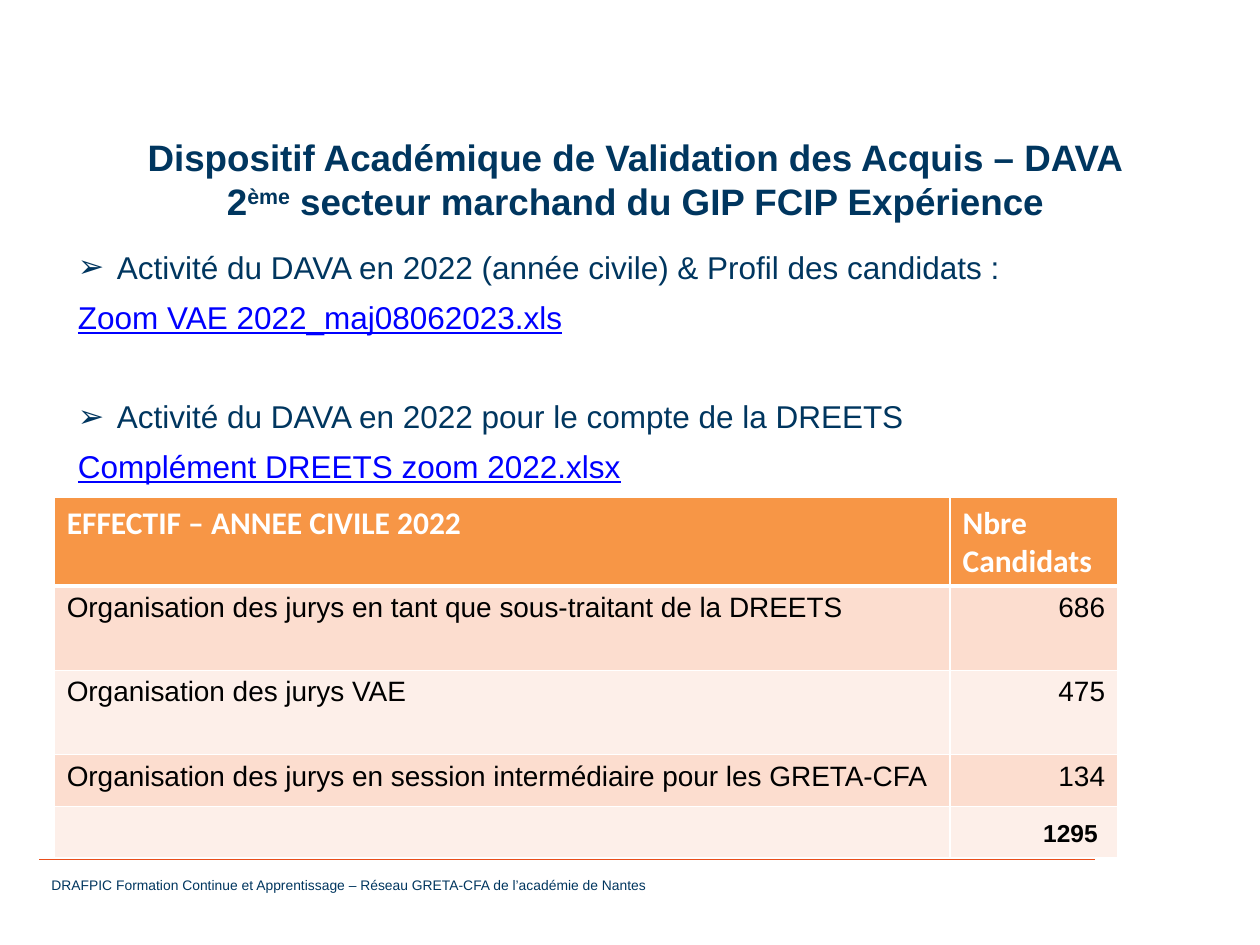
from pptx import Presentation
from pptx.dml.color import RGBColor
from pptx.enum.shapes import MSO_CONNECTOR
from pptx.enum.text import MSO_ANCHOR, PP_ALIGN
from pptx.oxml.ns import qn
from pptx.util import Inches, Pt
from lxml.etree import SubElement

NAVY = RGBColor(0x00, 0x36, 0x5F)
BLUE = RGBColor(0x00, 0x00, 0xFF)
RUST = RGBColor(0xE9, 0x4E, 0x1B)
ORANGE = RGBColor(0xF7, 0x96, 0x46)
PEACH = RGBColor(0xFC, 0xDD, 0xCF)
PALE = RGBColor(0xFD, 0xEF, 0xE9)
WHITE = RGBColor(0xFF, 0xFF, 0xFF)
BLACK = RGBColor(0x00, 0x00, 0x00)


def write(par, text, size=18, color=NAVY, face="Arial", bold=False,
          under=False, align=PP_ALIGN.LEFT, raised=False):
    par.alignment = align
    run = par.add_run()
    run.text = text
    font = run.font
    font.size, font.name, font.bold = Pt(size), face, bold
    font.underline = under
    font.color.rgb = color
    if raised:
        run._r.get_or_add_rPr().set("baseline", "30000")


def edge(cell, side, width):
    line = SubElement(cell._tc.get_or_add_tcPr(), qn("a:" + side), w=str(Pt(width)))
    fill = SubElement(line, qn("a:solidFill"))
    SubElement(fill, qn("a:srgbClr"), val=str(WHITE))


deck = Presentation()
deck.slide_width, deck.slide_height = Inches(10), Inches(7.5)
slide = deck.slides.add_slide(deck.slide_layouts[5])
shapes = slide.shapes

rule = shapes.add_connector(MSO_CONNECTOR.STRAIGHT, Inches(0.31), Inches(6.82),
                            Inches(8.69), Inches(6.82))
rule.line.color.rgb = RUST
rule.line.width = Pt(0.25)
SubElement(rule._element.spPr, qn("a:effectLst"))

foot = shapes.add_textbox(Inches(0.31), Inches(6.91), Inches(6.19), Inches(0.23)).text_frame
foot.word_wrap = True
write(foot.paragraphs[0],
      "DRAFPIC Formation Continue et Apprentissage – Réseau GRETA-CFA de l’académie de Nantes",
      size=7.9)

title = shapes.title
title.left, title.top = Inches(0.43), Inches(1.02)
title.width, title.height = Inches(9.23), Inches(1.57)
head = title.text_frame
head.word_wrap = True
head.vertical_anchor = MSO_ANCHOR.TOP
bold = dict(size=21, bold=True, align=PP_ALIGN.CENTER)
write(head.paragraphs[0], "Dispositif Académique de Validation des Acquis – DAVA", **bold)
par = head.add_paragraph()
write(par, "2", **bold)
write(par, "ème", raised=True, **bold)
write(par, " secteur marchand du GIP FCIP Expérience", **bold)

body = shapes.add_textbox(Inches(0.52), Inches(1.92), Inches(8.65), Inches(3.11)).text_frame
body.word_wrap = True
items = [
    ("Activité du DAVA en 2022 (année civile) & Profil des candidats :",
     "Zoom VAE 2022_maj08062023.xls"),
    ("Activité du DAVA en 2022 pour le compte de la DREETS",
     "Complément DREETS zoom 2022.xlsx"),
]
for i, (topic, file) in enumerate(items):
    par = body.add_paragraph() if i else body.paragraphs[0]
    props = par._p.get_or_add_pPr()
    props.set("marL", str(Inches(0.31)))
    props.set("indent", str(Inches(-0.31)))
    SubElement(props, qn("a:buFont"), typeface="Arial")
    SubElement(props, qn("a:buChar"), char="➢")
    if i:
        par.space_before = Pt(28)
    write(par, topic)
    link = body.add_paragraph()
    write(link, file, color=BLUE, under=True)
    par.space_after = link.space_after = Pt(7)

rows = [
    ("EFFECTIF – ANNEE CIVILE 2022", "Nbre Candidats", 0.68),
    ("Organisation des jurys en tant que sous-traitant de la DREETS", "686", 0.67),
    ("Organisation des jurys VAE", "475", 0.67),
    ("Organisation des jurys en session intermédiaire pour les GRETA-CFA", "134", 0.41),
    ("", "1295", 0.41),
]
high = sum(row[2] for row in rows)
grid = shapes.add_table(len(rows), 2, Inches(0.43), Inches(3.95),
                        Inches(8.44), Inches(high)).table
grid.columns[0].width, grid.columns[1].width = Inches(7.11), Inches(1.33)
for r, (label, count, tall) in enumerate(rows):
    grid.rows[r].height = Inches(tall)
    last = r == len(rows) - 1
    for c, text in enumerate((label, count)):
        cell = grid.cell(r, c)
        for side in ("lnL", "lnR", "lnT", "lnB"):
            thick = (r == 0 and side == "lnB") or (r == 1 and side == "lnT")
            edge(cell, side, 3 if thick else 1)
        cell.fill.solid()
        cell.fill.fore_color.rgb = ORANGE if r == 0 else PEACH if r % 2 else PALE
        par = cell.text_frame.paragraphs[0]
        if r == 0:
            write(par, text, color=WHITE, face="Calibri", bold=True)
        elif text:
            write(par, text, size=14 if last else 16, color=BLACK, bold=last,
                  align=PP_ALIGN.RIGHT if c else PP_ALIGN.LEFT)
    if last:
        write(par, " ", color=BLACK, face="Calibri", align=PP_ALIGN.RIGHT)

deck.save("out.pptx")
